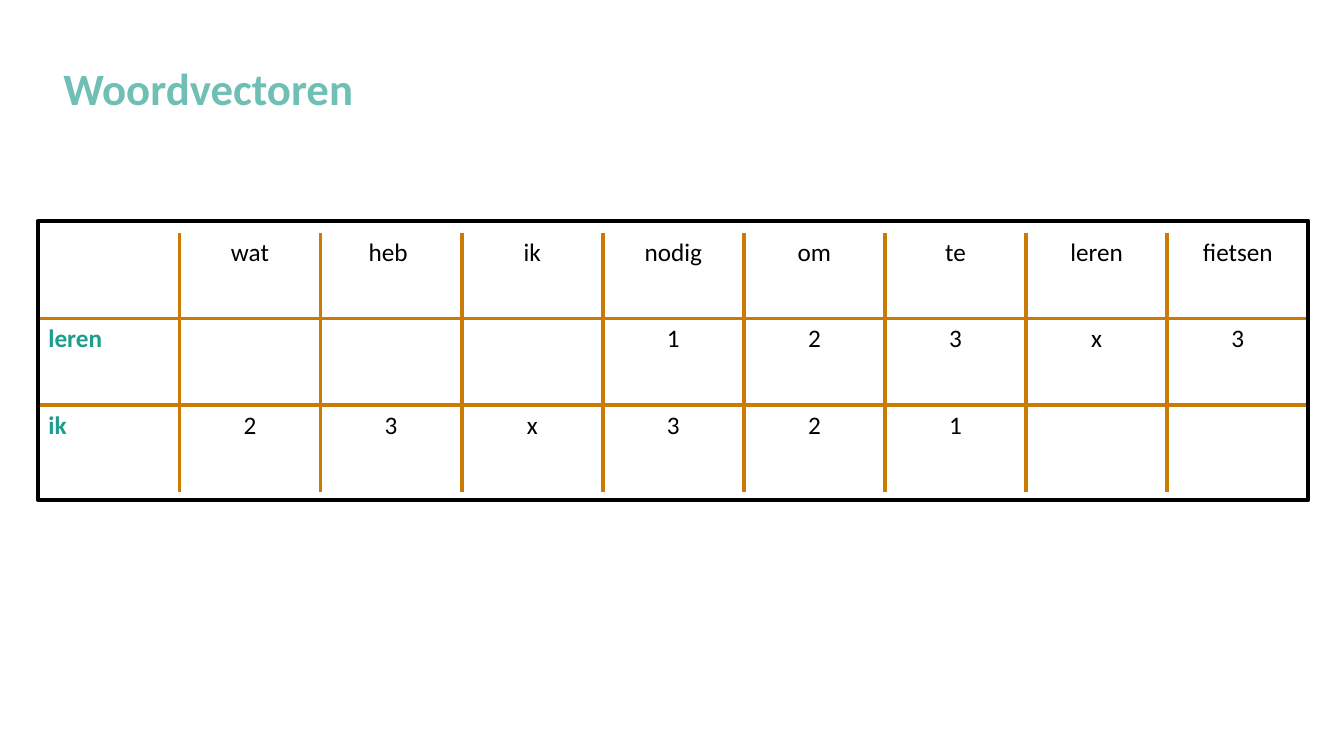
"""Build the slide with the word vector table."""
import pptx
import pptx.util
import pptx.dml.color
import pptx.enum.shapes
import pptx.enum.text
import pptx.oxml
import pptx.oxml.ns

TITLE = "Woordvectoren"
ROWS = [
    ["", "wat", "heb ", "ik", "nodig", "om", "te", "leren", "fietsen"],
    ["leren", "", "", "", "1", "2", "3", "x", "3"],
    ["ik", "2", "3", "x", "3", "2", "1", "", ""],
]
THEME = {
    "font": "Calibri", "title": "6FBFB5", "label": "1B9E8B", "text": "000000",
    "grid": "CB7B05", "frame": "000000", "title_size": 32, "cell_size": 18, "line": 3,
}
SLIDE_SIZE = (960, 540)
TITLE_BOX = (38.16, 39.6, 861.84, 46.08)
TABLE_BOX = (27.36, 166.32, 907.2, 185.04)
FRAME_BOX = (27.36, 157.68, 907.2, 199.44)
ROW_HEIGHTS = (61.2, 61.92, 61.92)

Pt = pptx.util.Pt
ALIGN = pptx.enum.text.PP_ALIGN


def points(values):
    return [Pt(value) for value in values]


def write(para, text, size, color, bold):
    span = para.add_run()
    span.text = text
    formats = {"name": THEME["font"], "size": Pt(size), "bold": bold}
    for name, value in formats.items():
        setattr(span.font, name, value)
    span.font.color.rgb = pptx.dml.color.RGBColor.from_string(color)


def set_borders(cell, sides):
    properties = cell._tc.get_or_add_tcPr()
    for side, shown in sides.items():
        paint = (f'<a:solidFill><a:srgbClr val="{THEME["grid"]}"/></a:solidFill>'
                 if shown else "<a:noFill/>")
        properties.append(pptx.oxml.parse_xml(
            f'<a:ln{side} {pptx.oxml.ns.nsdecls("a")} w="{Pt(THEME["line"])}">'
            f'{paint}</a:ln{side}>'))


def add_grid(page):
    last_row, last_column = len(ROWS) - 1, len(ROWS[0]) - 1
    table = page.shapes.add_table(len(ROWS), len(ROWS[0]), *points(TABLE_BOX)).table
    table.first_row = table.horz_banding = False
    for column in table.columns:
        column.width = Pt(TABLE_BOX[2] / len(ROWS[0]))
    for row, height in zip(table.rows, ROW_HEIGHTS):
        row.height = Pt(height)
    for r, words in enumerate(ROWS):
        for c, word in enumerate(words):
            cell = table.cell(r, c)
            set_borders(cell, {"L": c > 0, "R": c < last_column,
                               "T": r > 0, "B": r < last_row})
            cell.fill.background()
            if word:
                para = cell.text_frame.paragraphs[0]
                para.alignment = ALIGN.CENTER if c else ALIGN.LEFT
                color = THEME["text"] if c else THEME["label"]
                write(para, word, THEME["cell_size"], color, c == 0)


def add_frame(page):
    frame = page.shapes.add_shape(
        pptx.enum.shapes.MSO_SHAPE.RECTANGLE, *points(FRAME_BOX))
    frame.shadow.inherit = False
    frame.fill.background()
    frame.line.color.rgb = pptx.dml.color.RGBColor.from_string(THEME["frame"])
    frame.line.width = Pt(THEME["line"])


def add_title(page):
    box = page.shapes.add_textbox(*points(TITLE_BOX))
    box.text_frame.word_wrap = True
    box.text_frame.auto_size = pptx.enum.text.MSO_AUTO_SIZE.SHAPE_TO_FIT_TEXT
    write(box.text_frame.paragraphs[0], TITLE, THEME["title_size"], THEME["title"], True)


def main():
    deck = pptx.Presentation()
    deck.slide_width, deck.slide_height = points(SLIDE_SIZE)
    page = deck.slides.add_slide(deck.slide_layouts[6])
    add_grid(page)
    add_frame(page)
    add_title(page)
    deck.save("out.pptx")


if __name__ == "__main__":
    main()
